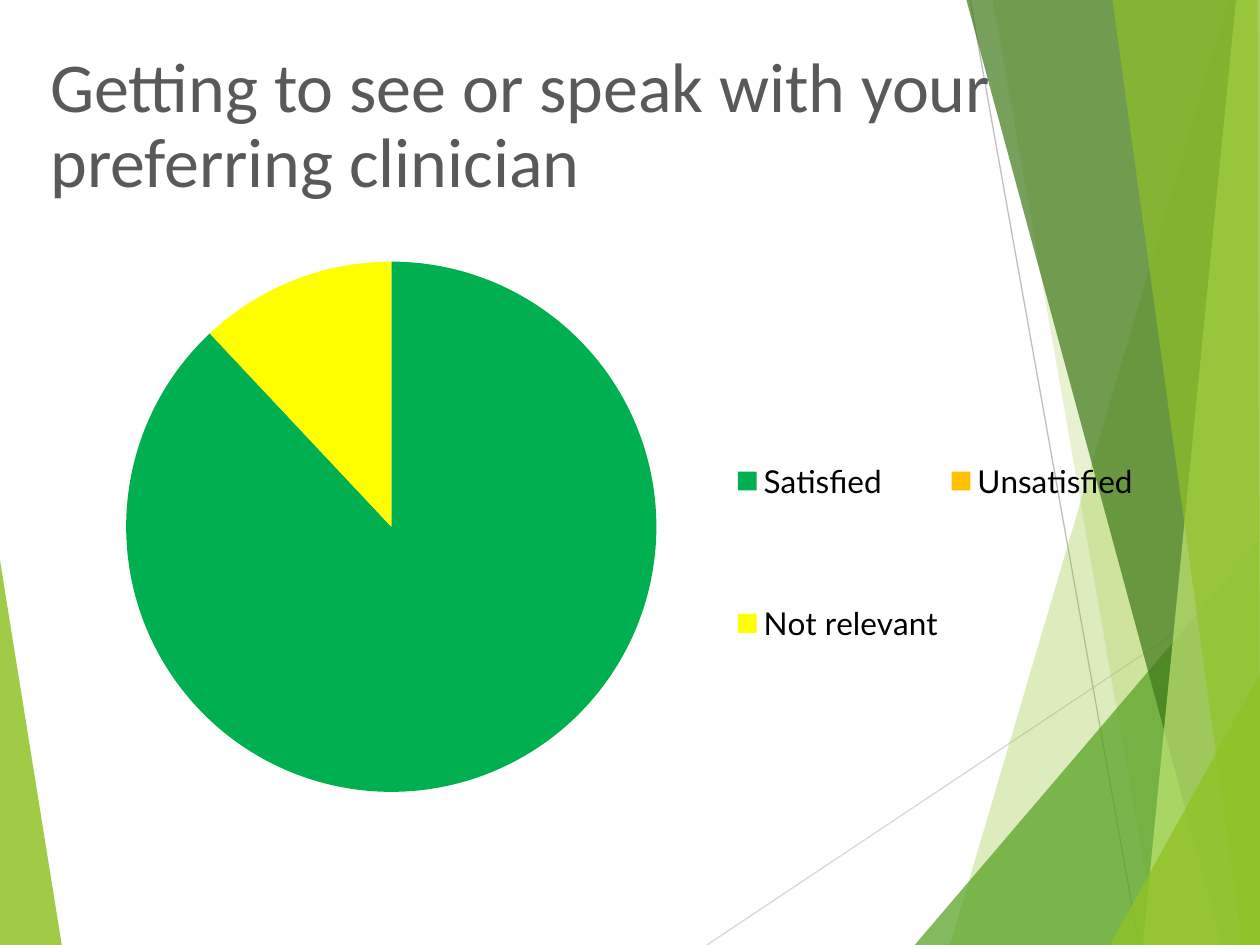
from lxml import etree
from pptx import Presentation
from pptx.chart.data import CategoryChartData
from pptx.dml.color import RGBColor
from pptx.enum.chart import XL_CHART_TYPE, XL_LEGEND_POSITION
from pptx.enum.shapes import MSO_CONNECTOR
from pptx.enum.text import MSO_ANCHOR, PP_ALIGN
from pptx.oxml import parse_xml
from pptx.oxml.ns import nsdecls, qn
from pptx.util import Inches, Pt

PIE = XL_CHART_TYPE.PIE
RIGHT = XL_LEGEND_POSITION.RIGHT
STRAIGHT = MSO_CONNECTOR.STRAIGHT
TOP = MSO_ANCHOR.TOP
LEFT = PP_ALIGN.LEFT

WIDTH, HEIGHT = Inches(10), Inches(7.5)
COLORS = {
    "lime": "90C226", "green": "54A021", "forest": "3F7819", "pale": "C0E474",
    "silver": "D9D9D9", "gray": "BFBFBF", "title": "595959", "legend": "000000",
    "satisfied": "00B050", "unsatisfied": "FFC000", "not_relevant": "FFFF00",
}
# Rays and facets in percent of the slide's width and height.
RAYS = [((56.1, 100), (100, 61), "silver"), ((77, 0), (90.4, 100), "gray")]
LEFT_FACET = ([(0, 59.3), (4.9, 100), (0, 100)], "lime", 85)
RIGHT_FACETS = [
    ([(97.5, 0), (75.4, 100), (100, 100), (100, 0)], "lime", 30),
    ([(78.8, 0), (91.9, 100), (100, 100), (100, 0)], "lime", 20),
    ([(72.6, 100), (100, 57.2), (100, 100)], "green", 72),
    ([(76.7, 0), (97, 100), (100, 100), (100, 0)], "forest", 70),
    ([(98.1, 0), (90.7, 100), (100, 100), (100, 0)], "pale", 70),
    ([(88.3, 0), (98.6, 100), (100, 100), (99.8, 0)], "lime", 65),
    ([(88.1, 100), (100, 71.3), (100, 100)], "lime", 80),
]
RATINGS = [("Satisfied", 88, "satisfied"), ("Unsatisfied", 0, "unsatisfied"),
           ("Not relevant", 12, "not_relevant")]


def rgb(name):
    return RGBColor.from_string(COLORS[name])


def on_slide(point):
    """Turn a point in percent of the slide into lengths."""
    return int(point[0] * WIDTH / 100), int(point[1] * HEIGHT / 100)


def add_facet(slide, corners, color, opacity):
    start, *rest = map(on_slide, corners)
    builder = slide.shapes.build_freeform(*start)
    builder.add_line_segments(rest, close=True)
    facet = builder.convert_to_shape()
    facet.shadow.inherit = False
    facet.line.fill.background()
    facet.fill.solid()
    facet.fill.fore_color.rgb = rgb(color)
    tint = facet.fill._xPr.find(".//" + qn("a:srgbClr"))
    etree.SubElement(tint, qn("a:alpha")).set("val", str(opacity * 1000))


def add_ray(slide, start, end, color):
    ray = slide.shapes.add_connector(STRAIGHT, *on_slide(start), *on_slide(end))
    ray.line.color.rgb = rgb(color)
    ray.line.width = Pt(0.75)
    etree.SubElement(ray._element.spPr, qn("a:effectLst"))


def add_backdrop(slide):
    add_facet(slide, *LEFT_FACET)
    for ray in RAYS:
        add_ray(slide, *ray)
    for facet in RIGHT_FACETS:
        add_facet(slide, *facet)


def place_title(slide, box, wording):
    title = slide.shapes.title
    slide.shapes._spTree.append(title._element)  # in front of the backdrop
    title.left, title.top, title.width, title.height = box
    frame = title.text_frame
    frame.text = wording
    frame.word_wrap = True
    frame.vertical_anchor = TOP
    heading = frame.paragraphs[0]
    heading.alignment = LEFT
    heading.line_spacing = 0.9
    heading.font.name = "Calibri"
    heading.font.size = Pt(40)
    heading.font.color.rgb = rgb("title")


def manual_layout(x, y, w, h, inner=False):
    """Layout of a chart part, in shares of the chart's box."""
    target = '<c:layoutTarget val="inner"/>' if inner else ""
    return parse_xml(
        f'<c:layout {nsdecls("c")}><c:manualLayout>{target}'
        '<c:xMode val="edge"/><c:yMode val="edge"/>'
        f'<c:x val="{x}"/><c:y val="{y}"/><c:w val="{w}"/><c:h val="{h}"/>'
        "</c:manualLayout></c:layout>")


def add_ratings_pie(slide, box):
    ratings = CategoryChartData()
    ratings.categories = [label for label, _, _ in RATINGS]
    ratings.add_series("Series 1", [share for _, share, _ in RATINGS])
    chart = slide.shapes.add_chart(PIE, *box, ratings).chart
    chart.has_title = False
    chart.font.name = "Lato"
    chart.font.size = Pt(18)
    chart.font.color.rgb = rgb("legend")
    plot = chart.plots[0]
    plot.vary_by_categories = True
    for index, (_, _, color) in enumerate(RATINGS):
        wedge = plot.series[0].points[index].format
        wedge.fill.solid()
        wedge.fill.fore_color.rgb = rgb(color)
        wedge.line.fill.background()

    chart.has_legend = True
    legend = chart.legend
    legend.position = RIGHT
    legend.include_in_layout = False
    plot_area = chart._chartSpace.chart.plotArea
    for part in (plot_area, legend._element):
        for layout in part.findall(qn("c:layout")):
            part.remove(layout)
    plot_area.insert(0, manual_layout(0.2, 0.03, 0.42, 0.94, inner=True))
    legend._element.find(qn("c:legendPos")).addnext(
        manual_layout(0.67, 0.2, 0.34, 0.69))


def main():
    deck = Presentation()
    deck.slide_width, deck.slide_height = WIDTH, HEIGHT
    slide = deck.slides.add_slide(deck.slide_layouts[5])
    add_backdrop(slide)
    place_title(slide, (*on_slide((3, 4.8)), *on_slide((78, 19.2))),
                "Getting to see or speak with your preferring clinician")
    add_ratings_pie(slide, (*on_slide((-10.6, 25.9)), *on_slide((101.6, 59.7))))
    deck.save("out.pptx")


if __name__ == "__main__":
    main()
